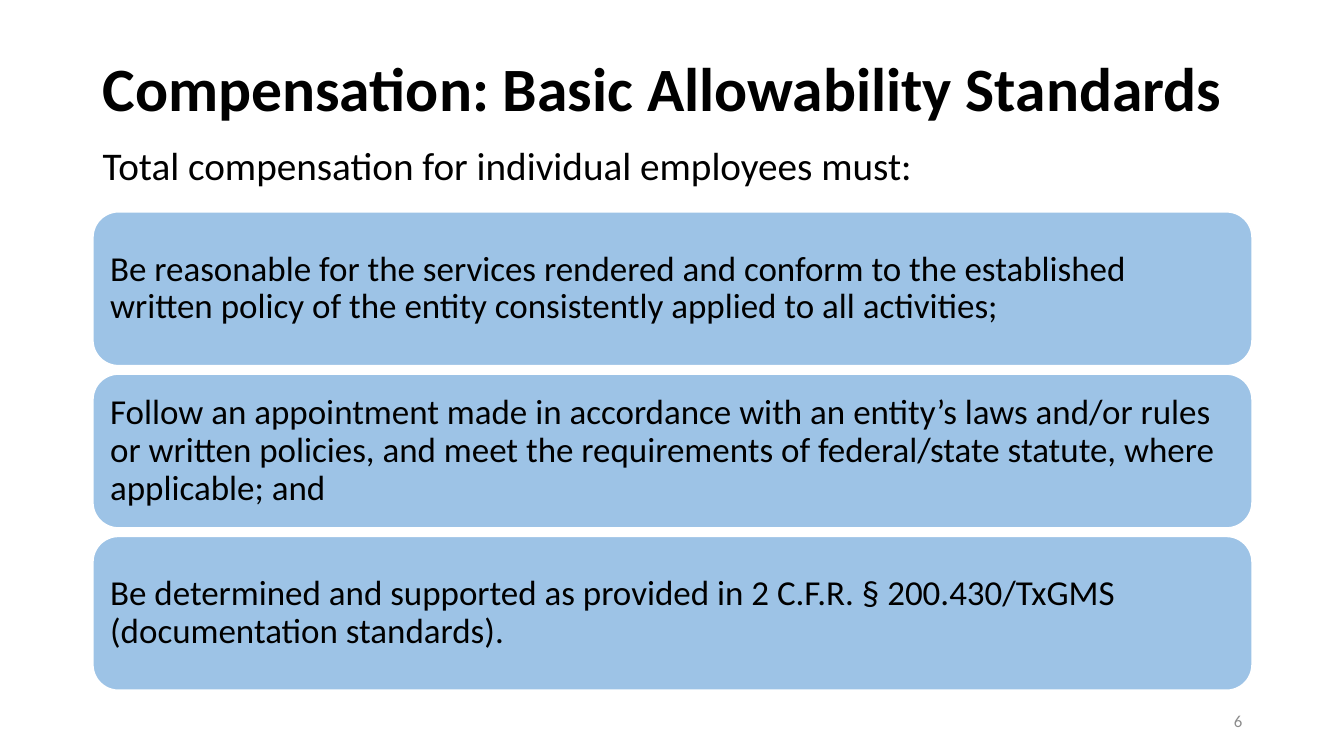
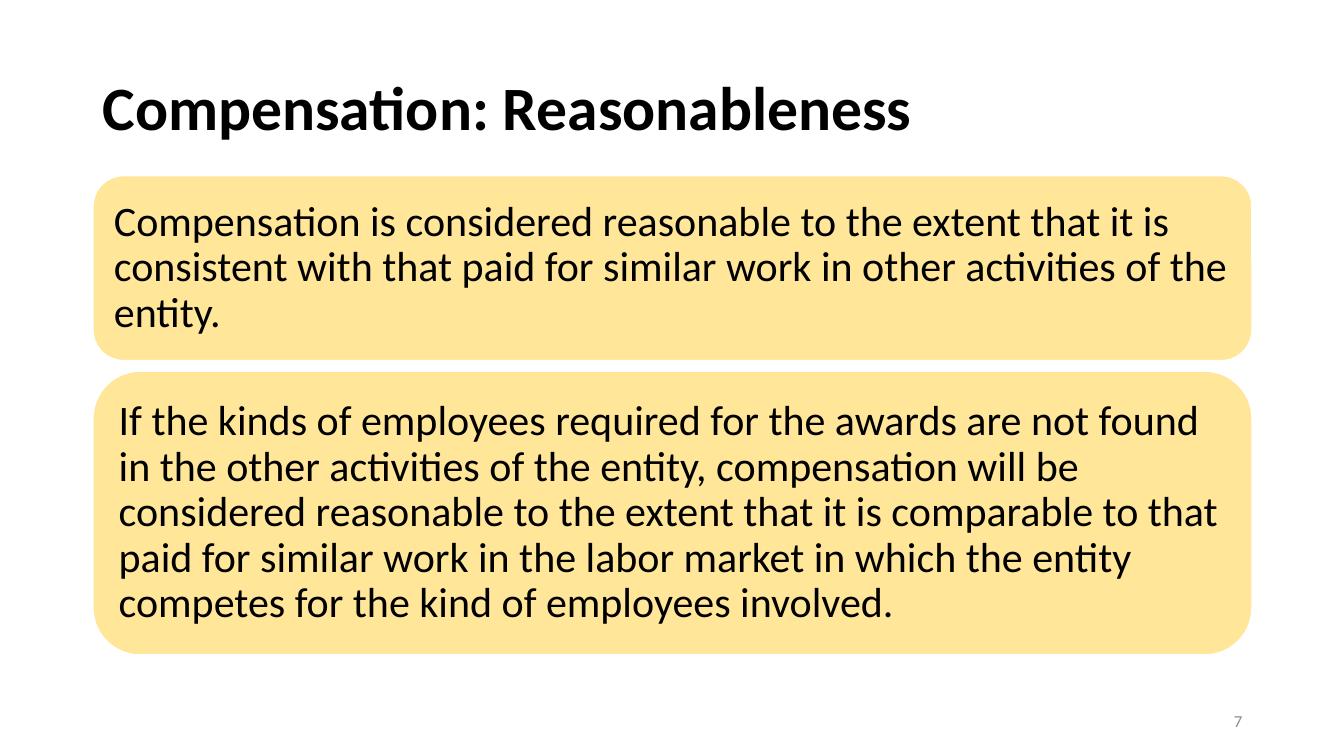
from pptx import Presentation
from pptx.dml.color import RGBColor
from pptx.enum.shapes import MSO_SHAPE
from pptx.enum.text import MSO_ANCHOR, PP_ALIGN
from pptx.util import Inches, Pt

ROUNDED = MSO_SHAPE.ROUNDED_RECTANGLE
TOP, MIDDLE = MSO_ANCHOR.TOP, MSO_ANCHOR.MIDDLE
LEFT, RIGHT = PP_ALIGN.LEFT, PP_ALIGN.RIGHT

BLACK = RGBColor(0x00, 0x00, 0x00)
WHITE = RGBColor(0xFF, 0xFF, 0xFF)
GREY = RGBColor(0x8C, 0x8C, 0x8C)
BLUE = RGBColor(0x9D, 0xC3, 0xE6)
YELLOW = RGBColor(0xFF, 0xE6, 0x99)

FONT = "Calibri"
MARGIN, WIDTH = 0.92, 11.5


class Deck:
    """Holds the shared style and the current slide."""

    def __init__(self):
        self.prs = Presentation()
        self.prs.slide_width = Inches(13.33)
        self.prs.slide_height = Inches(7.5)
        self.slide = None

    def new_slide(self, title, title_top, number):
        self.slide = self.prs.slides.add_slide(self.prs.slide_layouts[6])
        self.text(title, MARGIN, title_top, WIDTH, 1.01, 44, bold=True)
        self.text(number, 9.42, 6.95, 3, 0.4, 12, color=GREY, align=RIGHT, spacing=1.0)

    def set_text(self, sp, text, size, color=BLACK, bold=False, align=LEFT,
                 anchor=MIDDLE, spacing=0.9):
        tf = sp.text_frame
        tf.word_wrap = True
        tf.vertical_anchor = anchor
        p = tf.paragraphs[0]
        p.text = text
        p.alignment = align
        p.line_spacing = spacing
        p.font.name = FONT
        p.font.size = Pt(size)
        p.font.bold = bold
        p.font.color.rgb = color
        return tf

    def text(self, text, left, top, width, height, size, **style):
        sp = self.slide.shapes.add_textbox(
            Inches(left), Inches(top), Inches(width), Inches(height))
        self.set_text(sp, text, size, **style)

    def card(self, text, top, height, fill, size, inset):
        sp = self.slide.shapes.add_shape(
            ROUNDED, Inches(MARGIN), Inches(top), Inches(WIDTH), Inches(height))
        sp.shadow.inherit = False
        sp.fill.solid()
        sp.fill.fore_color.rgb = fill
        sp.line.color.rgb = WHITE
        sp.line.width = Pt(1.35)
        tf = self.set_text(sp, text, size)
        tf.margin_left = tf.margin_right = Inches(inset)
        tf.margin_top = tf.margin_bottom = Inches(inset)

    def card_stack(self, cards, top, gap, fill, size, inset):
        """Stack (height, text) cards downwards with equal gaps."""
        for height, text in cards:
            self.card(text, top, height, fill, size, inset)
            top += height + gap


def main():
    deck = Deck()

    # Allowability standards
    deck.new_slide("Compensation: Basic Allowability Standards", 0.4, "6")
    deck.text("Total compensation for individual employees must:",
              MARGIN, 1.41, WIDTH, 0.63, 28, anchor=TOP)
    standards = [
        "Be reasonable for the services rendered and conform to the established "
        "written policy of the entity consistently applied to all activities;",
        "Follow an appointment made in accordance with an entity’s laws and/or rules "
        "or written policies, and meet the requirements of federal/state statute, "
        "where applicable; and",
        "Be determined and supported as provided in 2 C.F.R. § 200.430/TxGMS "
        "(documentation standards).",
    ]
    deck.card_stack([(1.53, text) for text in standards],
                    top=2.1, gap=0.08, fill=BLUE, size=25, inset=0.1)

    # Reasonableness
    deck.new_slide("Compensation: Reasonableness", 0.59, "7")
    tests = [
        (1.84, "Compensation is considered reasonable to the extent that it is "
               "consistent with that paid for similar work in other activities of "
               "the entity."),
        (2.82, "If the kinds of employees required for the awards are not found in "
               "the other activities of the entity, compensation will be considered "
               "reasonable to the extent that it is comparable to that paid for "
               "similar work in the labor market in which the entity competes for "
               "the kind of employees involved."),
    ]
    deck.card_stack(tests, top=1.74, gap=0.1, fill=YELLOW, size=30, inset=0.12)

    deck.prs.save("out.pptx")


if __name__ == "__main__":
    main()
